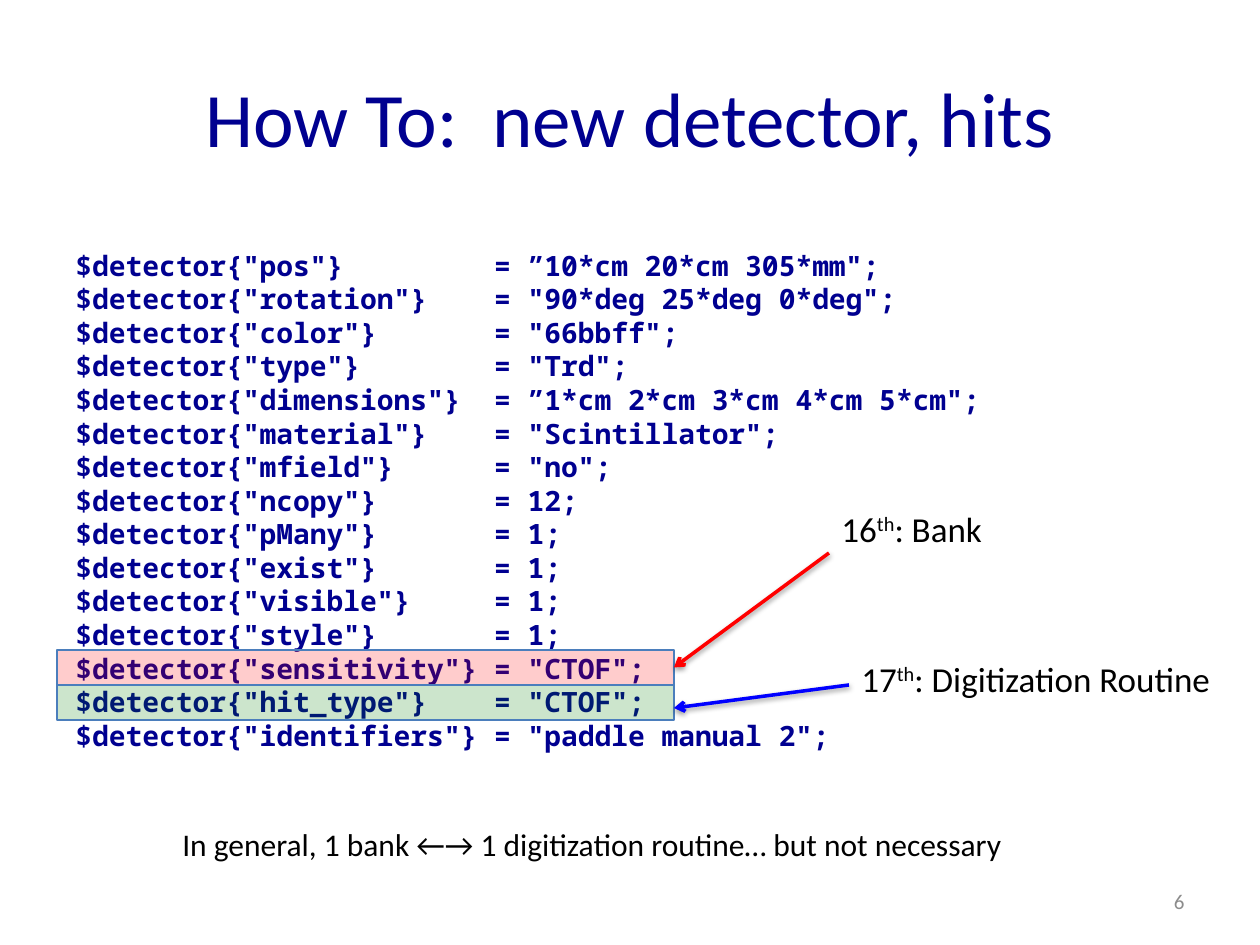
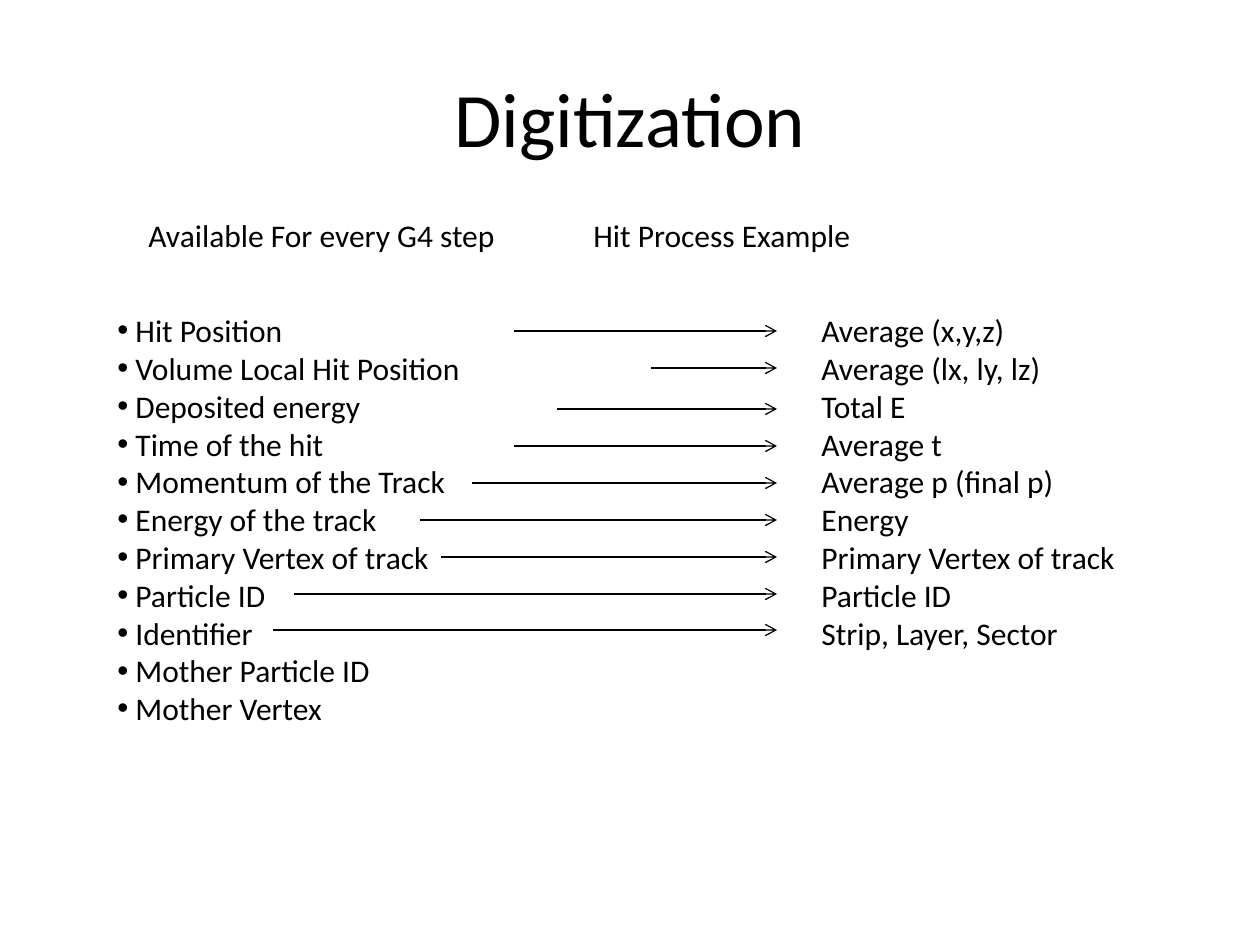
from lxml import etree
from pptx import Presentation, util as u
from pptx.dml.color import RGBColor
from pptx.enum import shapes, text
from pptx.oxml.ns import qn

PX = 914400 / 126
NAVY, BLACK, GRAY = "000090", "000000", "8C8C8C"
RED, GREEN, BLUE, OUTLINE = "FF0000", "008000", "0000FF", "4B7EBC"
BODY, MONO = "Calibri", "Noto Sans Mono"
MIDDLE = text.MSO_ANCHOR.MIDDLE

DETECTOR = [
    ("pos", '”10*cm 20*cm 305*mm"'),
    ("rotation", '"90*deg 25*deg 0*deg"'),
    ("color", '"66bbff"'),
    ("type", '"Trd"'),
    ("dimensions", '”1*cm 2*cm 3*cm 4*cm 5*cm"'),
    ("material", '"Scintillator"'),
    ("mfield", '"no"'),
    ("ncopy", "12"),
    ("pMany", "1"),
    ("exist", "1"),
    ("visible", "1"),
    ("style", "1"),
    ("sensitivity", '"CTOF"'),
    ("hit_type", '"CTOF"'),
    ("identifiers", '"paddle manual 2"'),
]
STEP_DATA = [
    "Hit Position", "Volume Local Hit Position", "Deposited energy", "Time of the hit",
    "Momentum of the Track", "Energy of the track", "Primary Vertex of track",
    "Particle ID", "Identifier", "Mother Particle ID", "Mother Vertex",
]
HIT_RESULTS = [
    "Average (x,y,z)", "Average (lx, ly, lz)", "Total E", "Average t",
    "Average p (final p)", "Energy", "Primary Vertex of track", "Particle ID",
    "Strip, Layer, Sector",
]
ARROW_STARTS = [
    (514, 331), (651, 368), (557, 409), (514, 446), (472, 483),
    (420, 520), (441, 557), (294, 594), (273, 630),
]


def px(n):
    """Turn px into EMU."""
    return u.Emu(round(n * PX))


def rgb(color):
    """Turn a hex string into a colour."""
    return RGBColor.from_string(color)


def add_xml(parent, tag, **attrs):
    """Append a drawing element with the given attributes."""
    el = etree.SubElement(parent, qn(tag))
    for name, value in attrs.items():
        el.set(name, str(value))
    return el


def style_runs(tf, size, color, font=BODY, bold=False):
    """Format every run of a text frame."""
    for p in tf.paragraphs:
        for r in p.runs:
            r.font.size, r.font.name, r.font.bold = u.Pt(size), font, bold
            r.font.color.rgb = rgb(color)


def add_text(s, box, lines, size=18, color=BLACK, font=BODY, bold=False):
    """Add a text box with one paragraph per line."""
    tf = s.shapes.add_textbox(*map(px, box)).text_frame
    tf.word_wrap = True
    tf.text = "\n".join(lines)
    style_runs(tf, size, color, font, bold)
    return tf


def add_arrow(s, start, end, color=BLACK, width=0.75, shadow=False):
    """Add a straight line with an open arrowhead at its end."""
    c = s.shapes.add_connector(shapes.MSO_CONNECTOR.STRAIGHT, *map(px, start + end))
    c.line.color.rgb, c.line.width = rgb(color), u.Pt(width)
    add_xml(c.line.color and c.line._get_or_add_ln(), "a:tailEnd", type="arrow")
    effects = add_xml(c._element.spPr, "a:effectLst")
    if shadow:
        outer = add_xml(effects, "a:outerShdw", blurRad=u.Pt(3.1), dist=u.Pt(1.6),
                        dir=90 * 60000, rotWithShape=0)
        add_xml(add_xml(outer, "a:srgbClr", val=BLACK), "a:alpha", val=38000)
    return c


def add_titled_slide(prs, title, color):
    """Add a title-only slide with the shared title style."""
    s = prs.slides.add_slide(prs.slide_layouts[5])
    sp = s.shapes.title
    sp.left, sp.top, sp.width, sp.height = map(px, (63, 38, 1134, 157))
    tf = sp.text_frame
    tf.text = title
    tf.vertical_anchor = MIDDLE
    tf.paragraphs[0].alignment = text.PP_ALIGN.CENTER
    style_runs(tf, 44, color)
    return s


def add_highlight(s, box, color):
    """Add a see-through band over a code line."""
    sp = s.shapes.add_shape(shapes.MSO_SHAPE.RECTANGLE, *map(px, box))
    sp.shadow.inherit = False
    sp.fill.solid()
    sp.fill.fore_color.rgb = rgb(color)
    add_xml(sp._element.spPr.find(".//" + qn("a:srgbClr")), "a:alpha", val=20000)
    sp.line.color.rgb, sp.line.width = rgb(OUTLINE), u.Pt(0.75)
    return sp


def add_ordinal_label(s, box, number, label):
    """Add a label that starts with a raised ordinal ending."""
    tf = add_text(s, box, [number])
    p = tf.paragraphs[0]
    for part in ("th", ": " + label):
        p.add_run().text = part
    style_runs(tf, 20, BLACK)
    p.runs[1]._r.get_or_add_rPr().set("baseline", "30000")


def add_code(s, x, y):
    """Add the detector listing with its two marked lines and callouts."""
    lines = [f'$detector{{"{key}"}}'.ljust(24) + f" = {value};" for key, value in DETECTOR]
    add_text(s, (x, y, 1134, 522), lines, 16, NAVY, MONO, True)
    bank = add_highlight(s, (x - 6, y + 408, 617, 35), RED)
    add_highlight(s, (x - 6, y + 443, 617, 35), GREEN)
    c = add_arrow(s, (x + 766, y + 311), (x + 611, y + 426), RED, 2, True)
    c.end_connect(bank, 3)
    add_arrow(s, (x + 786, y + 443), (x + 611, y + 466), BLUE, 2, True)
    add_ordinal_label(s, (x + 766, y + 259, 170, 55), "16", "Bank")
    add_ordinal_label(s, (x + 786, y + 409, 381, 55), "17", "Digitization Routine")


def add_page_number(s, box, number):
    """Add the right-aligned page number."""
    tf = add_text(s, box, [number], 12, GRAY)
    tf.vertical_anchor = MIDDLE
    tf.paragraphs[0].alignment = text.PP_ALIGN.RIGHT


def add_mapping(s, x, y):
    """Add the step data, the results and the arrows between them."""
    tf = add_text(s, (x, y, 609, 432), STEP_DATA)
    for p in tf.paragraphs:
        pPr = p._p.get_or_add_pPr()
        pPr.set("marL", str(px(18)))
        pPr.set("indent", str(px(-18)))
        add_xml(pPr, "a:buFont", typeface="Arial")
        add_xml(pPr, "a:buChar", char="•")
    add_text(s, (x + 704, y, 347, 357), HIT_RESULTS)
    for start_x, row_y in ARROW_STARTS:
        add_arrow(s, (start_x, row_y), (x + 672, row_y))


def add_headings(s, box):
    """Add both column headings on one line, parted by a tab stop."""
    tf = add_text(s, box, ["Available For every G4 step\tHit Process Example"])
    tabs = add_xml(tf.paragraphs[0]._p.get_or_add_pPr(), "a:tabLst")
    add_xml(tabs, "a:tab", pos=px(445), algn="l")


def build_detector_slide(prs):
    """Build the slide on detector hits."""
    s = add_titled_slide(prs, "How To:  new detector, hits", NAVY)
    add_code(s, 63, 242)
    add_text(s, (170, 819, 858, 50),
             ["In general, 1 bank ←→ 1 digitization routine… but not necessary"])
    add_page_number(s, (903, 876, 294, 50), "6")


def build_digitization_slide(prs):
    """Build the slide on digitization."""
    s = add_titled_slide(prs, "Digitization", BLACK)
    add_mapping(s, 105, 305)
    add_headings(s, (136, 210, 1007, 63))


def main():
    """Build and save the presentation."""
    prs = Presentation()
    prs.slide_width, prs.slide_height = px(1260), px(945)
    build_detector_slide(prs)
    build_digitization_slide(prs)
    prs.save("out.pptx")


if __name__ == "__main__":
    main()
